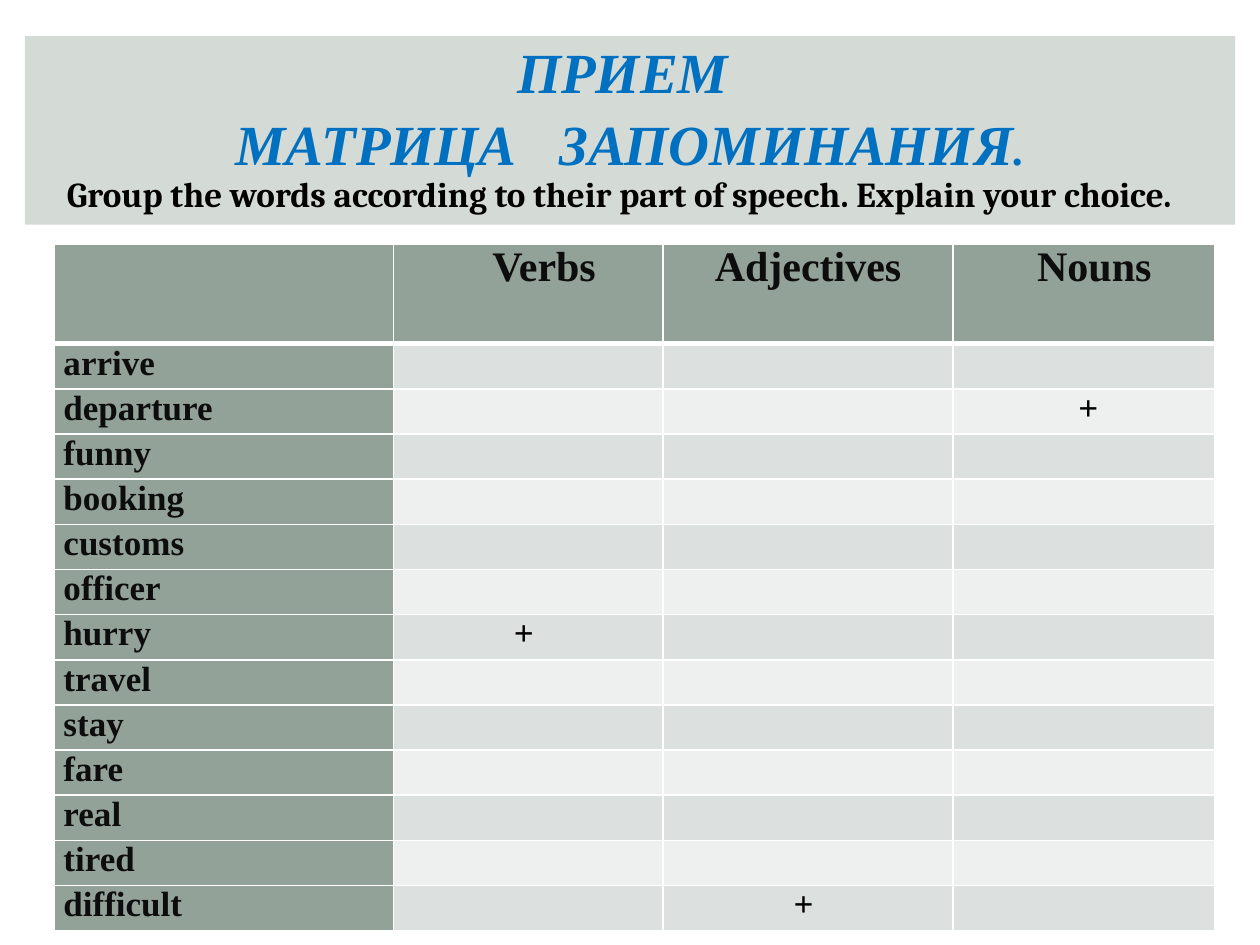
from lxml.etree import SubElement
from pptx import Presentation
from pptx.dml.color import RGBColor
from pptx.enum.shapes import MSO_SHAPE as Shape
from pptx.enum.text import MSO_ANCHOR as Anchor, PP_ALIGN as Align
from pptx.oxml.ns import qn
from pptx.util import Cm, Pt

COLORS = {
    "band": "D4DAD6", "title": "0070C0", "black": "000000", "label": "0D0D0D",
    "head": "93A299", "odd": "DCE0DE", "even": "EEF0EF", "border": "FFFFFF",
}
SERIF, TASK_FONT = "Times New Roman", "Cambria"
INSET = 0.18

# Each heading with its indent in cm, which moves it right of the centre
HEADINGS = [("", 0), ("Verbs", 0.64), ("Adjectives", 0), ("Nouns", 0.42)]
WORDS = ["arrive", "departure", "funny", "booking", "customs", "officer", "hurry",
         "travel", "stay", "fare", "real", "tired", "difficult"]
# Column of each plus sign and its indent in cm: positive right, negative left
MARKS = {"departure": (3, 0.18), "hurry": (1, -0.18), "difficult": (2, -0.18)}
COLUMN_WIDTHS = [6.83, 5.44, 5.84, 5.28]
HEAD_HEIGHT, ROW_HEIGHT = 2, 0.91


class SlideBuilder:
    def __init__(self, slide):
        self.slide = slide

    def color(self, name):
        return RGBColor.from_string(COLORS[name])

    def style(self, span, size, color, font=SERIF, italic=False):
        span.font.name = font
        span.font.size = Pt(size)
        span.font.bold = True
        span.font.italic = italic
        span.font.color.rgb = self.color(color)

    def band(self, left, top, width, height, color):
        band = self.slide.shapes.add_shape(
            Shape.RECTANGLE, Cm(left), Cm(top), Cm(width), Cm(height))
        band.shadow.inherit = False
        band.fill.solid()
        band.fill.fore_color.rgb = self.color(color)
        band.line.fill.background()

    def text_box(self, left, top, width, height, anchor=Anchor.TOP):
        box = self.slide.shapes.add_textbox(Cm(left), Cm(top), Cm(width), Cm(height))
        box.text_frame.word_wrap = True
        box.text_frame.vertical_anchor = anchor
        return box.text_frame.paragraphs[0]

    def title(self, left, top, width, height):
        para = self.text_box(left, top, width, height, Anchor.MIDDLE)
        para.alignment = Align.CENTER
        para.line_spacing = 1.05
        for text, size in [("ПРИЕМ ", 32.4), (None, None), ("МАТРИЦА", 32.4),
                           (" ", 32.4), ("ЗАПОМИНАНИЯ", 32.4), (".", 25.2)]:
            if text is None:
                para.add_line_break()
                continue
            span = para.add_run()
            span.text = text
            self.style(span, size, "title", italic=True)
            if text == " ":  # widen the gap between the two words
                span.font._element.set("spc", "1620")

    def task(self, left, top, width, height, text):
        para = self.text_box(left, top, width, height)
        para.text = text
        self.style(para.runs[0], 20, "black", TASK_FONT)

    def borders(self, cell, top, bottom):
        properties = cell._tc.get_or_add_tcPr()
        for side, points in (("L", 1), ("R", 1), ("T", top), ("B", bottom)):
            line = SubElement(properties, qn(f"a:ln{side}"), w=str(Pt(points)))
            fill = SubElement(line, qn("a:solidFill"))
            SubElement(fill, qn("a:srgbClr"), val=COLORS["border"])

    def cell(self, cell, fill, text="", size=20, color="label",
             align=Align.LEFT, indent=0, top=1, bottom=1):
        self.borders(cell, top, bottom)
        cell.fill.solid()
        cell.fill.fore_color.rgb = self.color(fill)
        cell.margin_top = cell.margin_bottom = 0
        cell.margin_left = Cm(INSET + max(indent, 0))
        cell.margin_right = Cm(INSET + max(-indent, 0))
        if text:
            para = cell.text_frame.paragraphs[0]
            para.text = text
            para.alignment = align
            self.style(para.runs[0], size, color)

    def matrix(self, left, top):
        height = HEAD_HEIGHT + ROW_HEIGHT * len(WORDS)
        table = self.slide.shapes.add_table(
            len(WORDS) + 1, len(HEADINGS), Cm(left), Cm(top),
            Cm(sum(COLUMN_WIDTHS)), Cm(height)).table
        for column, width in zip(table.columns, COLUMN_WIDTHS):
            column.width = Cm(width)
        for index, row in enumerate(table.rows):
            row.height = Cm(ROW_HEIGHT if index else HEAD_HEIGHT)

        # Heading row
        for column, (heading, indent) in enumerate(HEADINGS):
            self.cell(table.cell(0, column), "head", heading, 24,
                      align=Align.CENTER, indent=indent, bottom=3)

        # One row for each word, with a plus under its part of speech
        for row, word in enumerate(WORDS, 1):
            top_line = 3 if row == 1 else 1
            self.cell(table.cell(row, 0), "head", word, top=top_line)
            mark_column, indent = MARKS.get(word, (0, 0))
            for column in range(1, len(HEADINGS)):
                marked = column == mark_column
                self.cell(table.cell(row, column), "odd" if row % 2 else "even",
                          "+" if marked else "", color="black", align=Align.CENTER,
                          indent=indent if marked else 0, top=top_line)


def main():
    deck = Presentation()
    deck.slide_width, deck.slide_height = Cm(25.4), Cm(19.05)
    page = SlideBuilder(deck.slides.add_slide(deck.slide_layouts[6]))

    # Title band
    page.band(0.5, 0.73, 24.4, 3.8, "band")
    page.title(0.7, 0.92, 24, 2.4)
    page.task(1.1, 3.35, 24.2, 1.1,
              "Group the words according to their part of speech. Explain your choice.")

    # Word matrix
    page.matrix(1.1, 4.93)
    deck.save("out.pptx")


if __name__ == "__main__":
    main()
